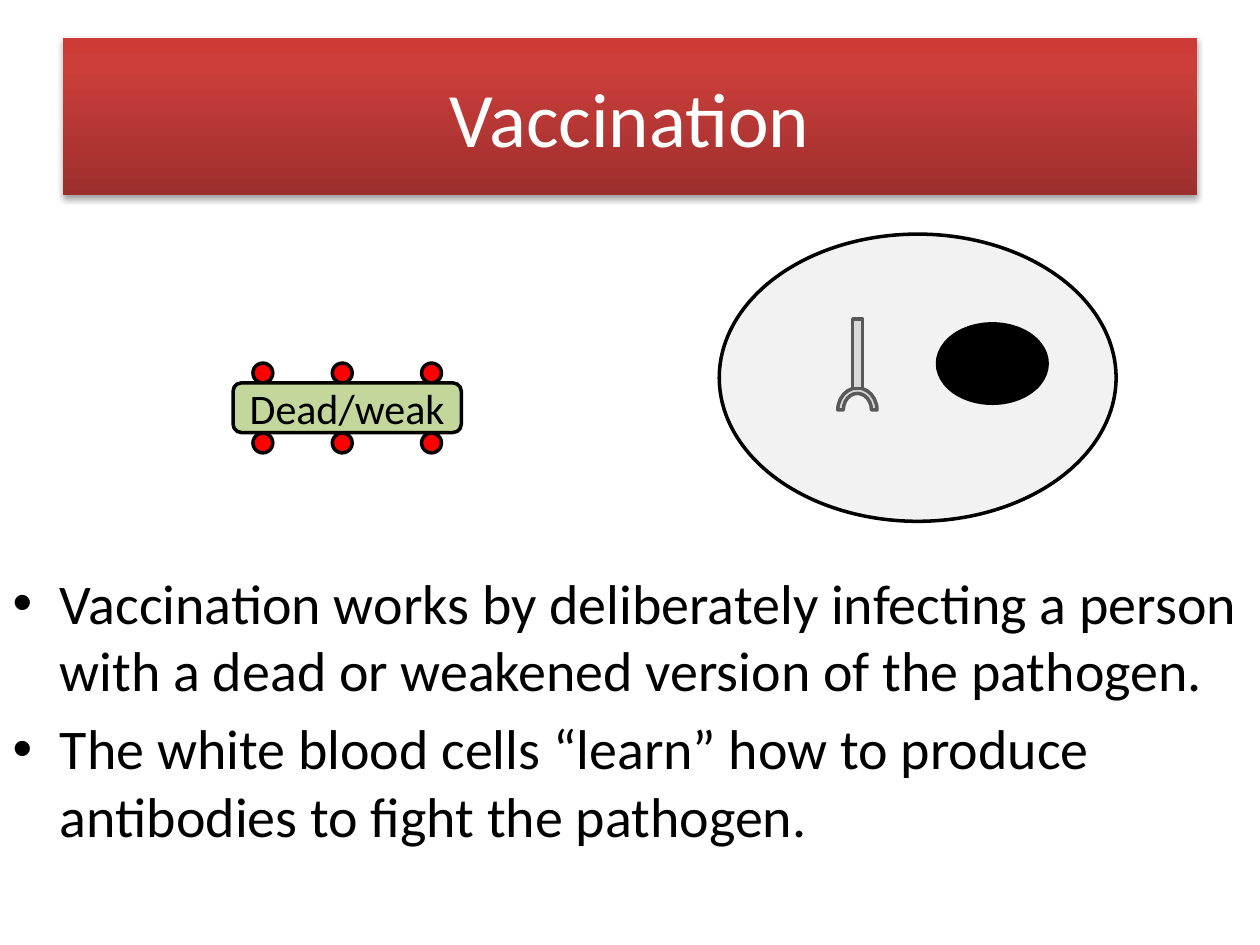
import copy
import pptx
import pptx.util
import pptx.dml.color
import pptx.enum.shapes
import pptx.enum.text
import pptx.oxml

Cm, Pt = pptx.util.Cm, pptx.util.Pt
KIND = pptx.enum.shapes.MSO_SHAPE
TEXT = pptx.enum.text


def hue(code):
    return pptx.dml.color.RGBColor.from_string(code)


def draw(group, kind, box, fill, line="000000"):
    shape = group.shapes.add_shape(kind, *[Cm(n) for n in box])
    shape.shadow.inherit = False
    shape.fill.solid()
    shape.fill.fore_color.rgb = hue(fill)
    shape.line.color.rgb = hue(line)
    shape.line.width = Pt(2)
    return shape


deck = pptx.Presentation()
deck.slide_width, deck.slide_height = Cm(25.4), Cm(19.05)
slide = deck.slides.add_slide(deck.slide_layouts[1])
title, body = slide.placeholders

# Title and list text
lines = [
    "Vaccination works by deliberately infecting a person with a dead or weakened version of the pathogen.",
    "The white blood cells “learn” how to produce antibodies to fight the pathogen.",
]
for holder, box, texts, size, ink in (
    (title, (1.27, 0.76, 22.86, 3.18), ["Vaccination"], 44, "FFFFFF"),
    (body, (0, 11.33, 25.4, 7.72), lines, 32, "000000"),
):
    holder.left, holder.top, holder.width, holder.height = [Cm(n) for n in box]
    frame = holder.text_frame
    for i, text in enumerate(texts):
        para = frame.paragraphs[0] if i == 0 else frame.add_paragraph()
        run = para.add_run()
        run.text = text
        run.font.name = "Calibri"
        run.font.size = Pt(size)
        run.font.color.rgb = hue(ink)

# Title banner: red gradient, dark at the bottom, with a soft shadow
title.fill.gradient()
title.fill.gradient_angle = 90
props = title._element.spPr
first = props.xpath(".//a:gs")[0]
first.addnext(copy.deepcopy(first))
shades = ((0, "9C2F2D"), (0.8, "CB3E3A"), (1, "CE3B37"))
for stop, (place, code) in zip(title.fill.gradient_stops, shades):
    stop.position = place
    stop.color.rgb = hue(code)
props.append(pptx.oxml.parse_xml(
    '<a:effectLst xmlns:a="http://schemas.openxmlformats.org/drawingml/2006/main">'
    '<a:outerShdw blurRad="40000" dist="23000" dir="5400000" rotWithShape="0">'
    '<a:srgbClr val="000000"><a:alpha val="35000"/></a:srgbClr>'
    '</a:outerShdw></a:effectLst>'))

# White blood cell with nucleus
draw(slide, KIND.OVAL, (14.5, 4.72, 8, 5.79), "F2F2F2")
draw(slide, KIND.OVAL, (18.9, 6.53, 2.21, 1.6), "000000")

# Antibody
body_group = slide.shapes.add_group_shape()
arc = draw(body_group, KIND.BLOCK_ARC, (16.89, 7.82, 0.79, 0.89), "D9D9D9", "595959")
for i, value in enumerate((108, 0, 0.141)):
    arc.adjustments[i] = value
draw(body_group, KIND.RECTANGLE, (17.19, 6.43, 0.2, 1.4), "D9D9D9", "595959")

# Pathogen with its antigens
germ = slide.shapes.add_group_shape()
for top in (7.32, 8.73):
    for left in (5.1, 6.7, 8.5):
        draw(germ, KIND.OVAL, (left, top, 0.4, 0.4), "FF0000")
shell = draw(germ, KIND.ROUNDED_RECTANGLE, (4.7, 7.72, 4.6, 1), "C3D69B")
frame = shell.text_frame
frame.word_wrap = False
frame.vertical_anchor = TEXT.MSO_ANCHOR.MIDDLE
para = frame.paragraphs[0]
para.alignment = TEXT.PP_ALIGN.CENTER
run = para.add_run()
run.text = "Dead/weak"
run.font.name = "Calibri"
run.font.size = Pt(24)
run.font.color.rgb = hue("000000")

deck.save("out.pptx")
